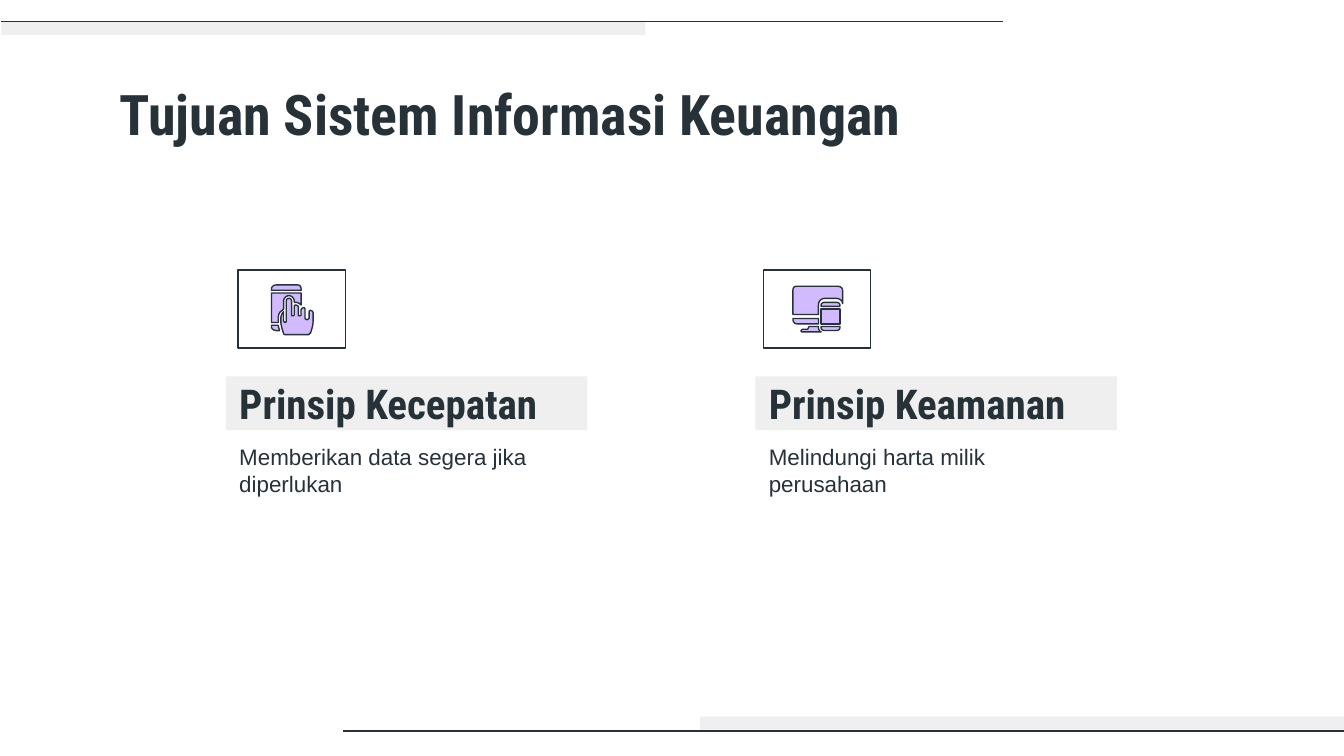
from lxml.etree import SubElement
from pptx import Presentation
from pptx.dml.color import RGBColor
from pptx.enum.shapes import MSO_CONNECTOR, MSO_SHAPE
from pptx.enum.text import MSO_ANCHOR, MSO_AUTO_SIZE, PP_ALIGN
from pptx.oxml.ns import qn
from pptx.util import Inches, Pt

INK = RGBColor(0x26, 0x32, 0x38)
BAND = RGBColor(0xEF, 0xEF, 0xEF)
LILAC = RGBColor(0xD2, 0xBA, 0xFF)
HEADING_FONT, BODY_FONT = "Roboto Condensed", "Arial"

WIDTH = 10
HEIGHT = WIDTH * 9 / 16
CARD_WIDTH, CARD_TOP = 2.69, 2.01
HEADING_DROP, HEADING_HEIGHT, BODY_HEIGHT = 0.79, 0.4, 1.6

# Icon outlines in hundredths of an inch from the frame's corner:
# pairs are corners, sixes are cubic curves.
TOUCH_PHONE = [
    [(25, 41), (25, 42), (25, 44, 27, 45, 29, 45), (31, 45),
     (31, 44, 30, 42, 30, 41)],
    [(25, 17), (25, 39), (30, 39), (30, 36), (30, 33, 31, 31, 33, 30),
     (34, 29), (34, 23), (34, 21, 36, 19, 38, 19), (40, 19, 42, 21, 42, 23),
     (42, 24), (43, 24), (45, 24, 46, 25, 47, 26), (47, 17)],
    [(29, 11), (27, 11, 25, 12, 25, 14), (25, 15), (47, 15), (47, 14),
     (47, 12, 46, 11, 44, 11)],
    [(38, 21), (37, 21, 36, 22, 36, 23), (36, 38), (36, 38, 36, 39, 35, 39),
     (35, 39, 34, 38, 34, 38), (34, 31), (33, 32, 32, 34, 32, 36), (32, 38),
     (32, 41, 33, 44, 34, 47), (34, 47, 34, 48, 35, 48), (53, 48),
     (53, 48, 53, 47, 54, 47), (55, 44, 56, 41, 56, 38), (56, 32),
     (56, 31, 55, 30, 54, 30), (53, 30, 53, 31, 53, 32), (53, 36),
     (53, 36, 52, 37, 51, 37), (51, 37, 50, 36, 50, 36), (50, 30),
     (50, 29, 50, 28, 49, 28), (48, 28, 47, 29, 47, 30), (47, 33),
     (47, 34, 47, 34, 46, 34), (45, 34, 45, 34, 45, 33), (45, 27),
     (45, 27, 44, 26, 43, 26), (42, 26, 42, 27, 42, 27), (42, 33),
     (42, 34, 41, 34, 41, 34), (40, 34, 40, 34, 40, 33), (40, 23),
     (40, 22, 39, 21, 38, 21)],
]
DEVICES = [
    [(34, 42), (33, 44), (29, 44), (29, 44, 28, 45, 28, 45),
     (28, 46, 29, 46, 29, 46), (43, 46), (42, 46, 41, 44, 41, 43), (41, 42)],
    [(22, 36), (22, 37), (22, 38, 23, 40, 25, 40), (41, 40), (41, 36)],
    [(43, 29), (43, 40), (57, 40), (57, 29)],
    [(43, 42), (43, 43), (43, 44, 44, 45, 46, 45), (54, 45),
     (56, 45, 57, 44, 57, 43), (57, 42)],
    [(25, 12), (23, 12, 22, 13, 22, 15), (22, 33), (41, 33), (41, 26),
     (41, 23, 43, 21, 46, 21), (54, 21), (57, 21, 59, 23, 59, 25), (59, 15),
     (59, 13, 57, 12, 55, 12)],
    [(46, 24), (44, 24, 43, 25, 43, 26), (43, 27), (57, 27), (57, 26),
     (57, 25, 56, 24, 54, 24)],
]

# left edge, frame indent, icon, heading, body
PRINCIPLES = [
    (1.68, 0.09, TOUCH_PHONE, "Prinsip Kecepatan",
     "Memberikan data segera jika diperlukan"),
    (5.62, 0.06, DEVICES, "Prinsip Keamanan",
     "Melindungi harta milik perusahaan"),
]


def add_rectangle(slide, box):
    rectangle = slide.shapes.add_shape(MSO_SHAPE.RECTANGLE, *map(Inches, box))
    rectangle.shadow.inherit = False
    return rectangle


def add_edge(slide, band_box, rule_start, rule_end, rule_y):
    """Draw a pale band with a thin rule beside it."""
    band = add_rectangle(slide, band_box)
    band.fill.solid()
    band.fill.fore_color.rgb = BAND
    band.line.fill.background()
    rule = slide.shapes.add_connector(
        MSO_CONNECTOR.STRAIGHT,
        *map(Inches, (rule_start, rule_y, rule_end, rule_y)))
    rule.line.color.rgb = INK
    rule.line.width = Pt(0.75)
    SubElement(rule._element.spPr, qn("a:effectLst"))


def fill_placeholder(placeholder, box, text, size, font_name, bold=False,
                     anchor=MSO_ANCHOR.TOP):
    (placeholder.left, placeholder.top,
     placeholder.width, placeholder.height) = map(Inches, box)
    frame = placeholder.text_frame
    frame.text = text
    frame.word_wrap = True
    frame.auto_size = MSO_AUTO_SIZE.NONE
    frame.vertical_anchor = anchor
    frame.margin_left = frame.margin_right = Inches(0.1)
    frame.margin_top = frame.margin_bottom = Inches(0.1)
    paragraph = frame.paragraphs[0]
    paragraph.alignment = PP_ALIGN.LEFT
    paragraph.space_before = Pt(0)
    font = paragraph.font
    font.name, font.size, font.bold = font_name, Pt(size), bold
    font.color.rgb = INK
    properties = paragraph._p.get_or_add_pPr()
    properties.set("marL", "0")
    properties.set("indent", "0")
    properties.insert_element_before(
        properties.makeelement(qn("a:buNone")), "a:tabLst", "a:defRPr")


def flatten(outline, steps=6):
    """Turn corners and cubic curves into a list of points."""
    points = []
    for segment in outline:
        if len(segment) == 2:
            points.append(segment)
            continue
        controls = (points[-1], segment[:2], segment[2:4], segment[4:])
        for step in range(1, steps + 1):
            t = step / steps
            weights = ((1 - t) ** 3, 3 * t * (1 - t) ** 2,
                       3 * t * t * (1 - t), t ** 3)
            points.append(tuple(
                sum(w * c[axis] for w, c in zip(weights, controls))
                for axis in (0, 1)))
    return [(Inches(x / 100), Inches(y / 100)) for x, y in points]


def add_icon(slide, left, top, outlines):
    frame = add_rectangle(slide, (left, top, 0.8, 0.58))
    frame.fill.background()
    frame.line.color.rgb = INK
    frame.line.width = Pt(0.75)
    icon = slide.shapes.add_group_shape()
    for outline in outlines:
        start, *rest = flatten(outline)
        builder = icon.shapes.build_freeform(*start)
        builder.add_line_segments(rest, close=True)
        part = builder.convert_to_shape(Inches(left), Inches(top))
        part.shadow.inherit = False
        part.fill.solid()
        part.fill.fore_color.rgb = LILAC
        part.line.color.rgb = INK
        part.line.width = Pt(0.75)


def add_principle(slide, left, top, indent, icon, heading, body, slots):
    heading_slot, body_slot = slots
    heading_top = top + HEADING_DROP
    fill_placeholder(heading_slot,
                     (left, heading_top, CARD_WIDTH, HEADING_HEIGHT),
                     heading, 22, HEADING_FONT, True, MSO_ANCHOR.MIDDLE)
    heading_slot.fill.solid()
    heading_slot.fill.fore_color.rgb = BAND
    fill_placeholder(body_slot, (left, heading_top + HEADING_HEIGHT,
                                 CARD_WIDTH, BODY_HEIGHT),
                     body, 12, BODY_FONT)
    add_icon(slide, left + indent, top, icon)


def main():
    presentation = Presentation()
    presentation.slide_width = Inches(WIDTH)
    presentation.slide_height = Inches(HEIGHT)
    comparison = presentation.slide_layouts.get_by_name("Comparison")
    slide = presentation.slides.add_slide(comparison)
    title, *slots = slide.placeholders

    add_edge(slide, (0.01, 0.16, 4.79, 0.1), 0.01, 7.46, 0.16)
    add_edge(slide, (5.21, 5.33, 4.79, 0.1), WIDTH, 2.55, 5.44)
    fill_placeholder(title, (0.79, 0.49, 8.43, 0.63),
                     "Tujuan Sistem Informasi Keuangan", 30, HEADING_FONT, True)
    for number, (left, *content) in enumerate(PRINCIPLES):
        add_principle(slide, left, CARD_TOP, *content,
                      slots=slots[2 * number:2 * number + 2])
    presentation.save("out.pptx")


if __name__ == "__main__":
    main()
